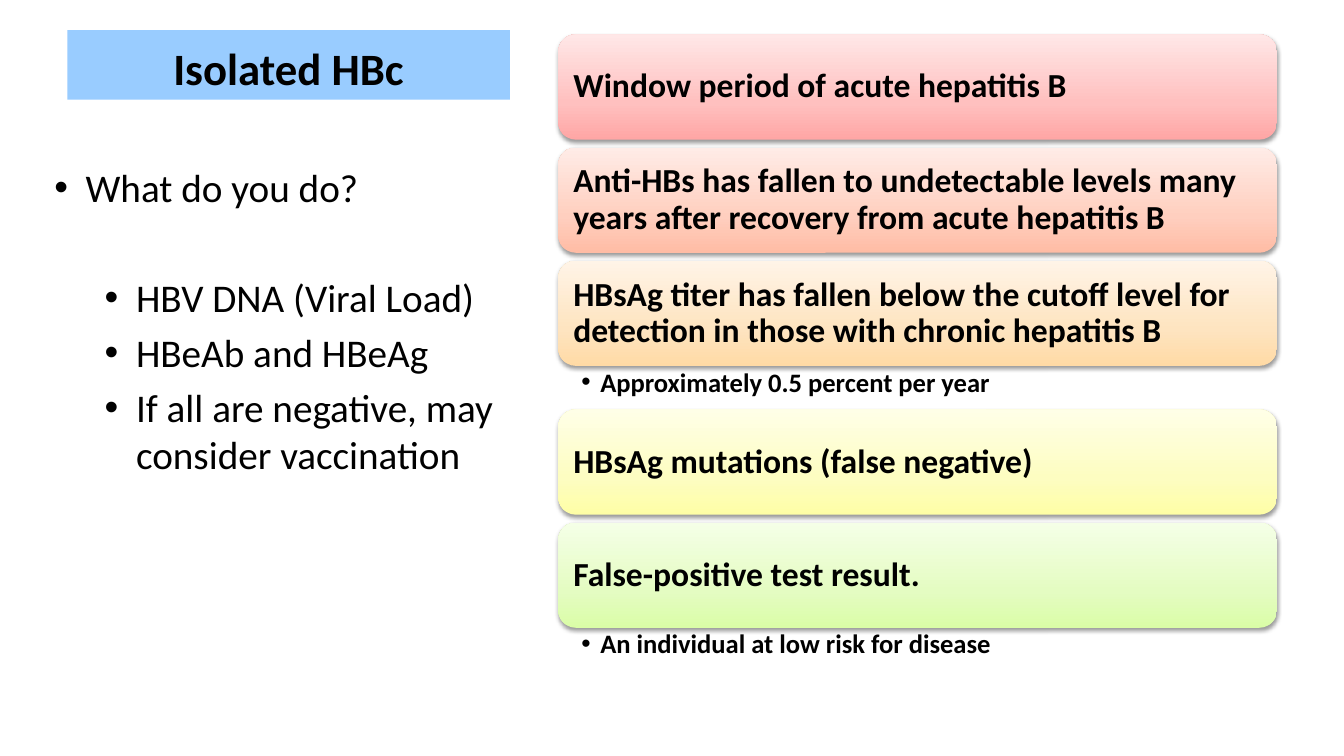
"""Build the slide on isolated HBc: next steps beside its possible causes."""
from dataclasses import dataclass

import lxml.etree
import pptx
import pptx.dml.color
import pptx.enum.shapes
import pptx.enum.text
import pptx.oxml.ns
import pptx.util

Cm = pptx.util.Cm
Pt = pptx.util.Pt
qn = pptx.oxml.ns.qn
ANCHOR = pptx.enum.text.MSO_ANCHOR
ALIGN = pptx.enum.text.PP_ALIGN
SHAPES = pptx.enum.shapes.MSO_SHAPE

FONT = "Calibri"
BLACK = "000000"
CARD_LEFT, CARD_TOP = 14.07, 0.87
CARD_WIDTH, CARD_HEIGHT = 18.11, 2.65
CARD_GAP, NOTE_HEIGHT = 0.2, 1.1


@dataclass
class Step:
    text: str
    left: float
    before: float


@dataclass
class Cause:
    text: str
    dark: str
    middle: str
    light: str
    note: str = ""


STEPS = [
    Step("What do you do?", 0.79, 5.6),
    Step("HBV DNA (Viral Load)", 2.06, 45),
    Step("HBeAb and HBeAg", 2.06, 5.6),
    Step("If all are negative, may consider vaccination", 2.06, 5.6),
]
CAUSES = [
    Cause("Window period of acute hepatitis B", "FFA6A5", "FFC0BF", "FFE7E7"),
    Cause("Anti-HBs has fallen to undetectable levels many years after recovery from acute hepatitis B",
          "FFBCA5", "FFCFBF", "FFECE7"),
    Cause("HBsAg titer has fallen below the cutoff level for detection in those with chronic hepatitis B",
          "FFDAA5", "FEE4C0", "FFF4E7", "Approximately 0.5 percent per year"),
    Cause("HBsAg mutations (false negative)", "FEFEA6", "FDFDC1", "FFFFE7"),
    Cause("False-positive test result.", "DAFDA7", "E4FCC2", "F5FFE7",
          "An individual at low risk for disease"),
]


def color(value: str) -> pptx.dml.color.RGBColor:
    """Turn a hex string into a colour."""
    return pptx.dml.color.RGBColor.from_string(value)


def add_span(para, text: str, size: float, bold: bool) -> None:
    """Add one run of black text to a paragraph."""
    span = para.add_run()
    span.text = text
    span.font.name = FONT
    span.font.size = Pt(size)
    span.font.bold = bold
    span.font.color.rgb = color(BLACK)


def add_bullet(para, left: float, hanging: float) -> None:
    """Give a paragraph a hanging round bullet."""
    properties = para._p.get_or_add_pPr()
    properties.set("marL", str(Cm(left)))
    properties.set("indent", str(-Cm(hanging)))
    lxml.etree.SubElement(properties, qn("a:buFont"), typeface="Arial")
    lxml.etree.SubElement(properties, qn("a:buChar"), char="•")


def set_margins(frame, left: float, top: float, right: float, bottom: float) -> None:
    """Wrap a text frame and set its inner margins."""
    frame.word_wrap = True
    frame.margin_left, frame.margin_top = Cm(left), Cm(top)
    frame.margin_right, frame.margin_bottom = Cm(right), Cm(bottom)


def add_gradient(shape, cause: Cause) -> None:
    """Fill a card from dark at the bottom to light at the top."""
    shape.fill.gradient()
    shape.fill.gradient_angle = 90
    stops = shape._element.spPr.find(".//" + qn("a:gsLst"))
    lxml.etree.SubElement(stops, qn("a:gs"), pos="100000")
    shades = [(0, cause.dark), (0.35, cause.middle), (1, cause.light)]
    for stop, (position, shade) in zip(shape.fill.gradient_stops, shades):
        stop.position = position
        stop.color.rgb = color(shade)


def add_shadow(shape) -> None:
    """Put a soft shadow below a card."""
    shape.shadow.inherit = False
    effects = shape._element.spPr.find(qn("a:effectLst"))
    shadow = lxml.etree.SubElement(effects, qn("a:outerShdw"), blurRad=str(Pt(3.1)),
                                   dist=str(Pt(1.6)), dir="5400000", rotWithShape="0")
    shade = lxml.etree.SubElement(shadow, qn("a:srgbClr"), val=BLACK)
    lxml.etree.SubElement(shade, qn("a:alpha"), val="38000")


def add_title(page) -> None:
    """Draw the title bar."""
    bar = page.shapes.add_shape(SHAPES.RECTANGLE, Cm(1.7), Cm(0.76), Cm(11.15), Cm(1.75))
    bar.shadow.inherit = False
    bar.fill.solid()
    bar.fill.fore_color.rgb = color("99CCFF")
    bar.line.fill.background()
    frame = bar.text_frame
    set_margins(frame, 0.25, 0.13, 0.25, 0.13)
    frame.vertical_anchor = ANCHOR.BOTTOM
    para = frame.paragraphs[0]
    para.alignment = ALIGN.CENTER
    add_span(para, "Isolated HBc", 32, True)


def add_steps(page) -> None:
    """Write the bulleted list of next steps."""
    box = page.shapes.add_textbox(Cm(1.12), Cm(3.99), Cm(11.71), Cm(13.03))
    frame = box.text_frame
    set_margins(frame, 0.25, 0.13, 0.25, 0.13)
    for index, step in enumerate(STEPS):
        para = frame.add_paragraph() if index else frame.paragraphs[0]
        para.space_before = Pt(step.before)
        add_bullet(para, step.left, 0.79)
        add_span(para, step.text, 28, False)


def add_card(page, cause: Cause, top: float) -> None:
    """Draw the card of one cause."""
    card = page.shapes.add_shape(SHAPES.ROUNDED_RECTANGLE, Cm(CARD_LEFT), Cm(top),
                                 Cm(CARD_WIDTH), Cm(CARD_HEIGHT))
    add_gradient(card, cause)
    card.line.fill.background()
    add_shadow(card)
    frame = card.text_frame
    set_margins(frame, 0.25, 0.25, 0.25, 0.25)
    frame.vertical_anchor = ANCHOR.MIDDLE
    para = frame.paragraphs[0]
    para.alignment = ALIGN.LEFT
    para.line_spacing = 0.9
    add_span(para, cause.text, 24, True)


def add_note(page, text: str, top: float) -> None:
    """Write the bulleted note under a card."""
    box = page.shapes.add_textbox(Cm(CARD_LEFT), Cm(top), Cm(CARD_WIDTH), Cm(NOTE_HEIGHT))
    set_margins(box.text_frame, 0.58, 0.08, 0.48, 0.08)
    para = box.text_frame.paragraphs[0]
    para.line_spacing = 0.9
    add_bullet(para, 0.48, 0.48)
    add_span(para, text, 19, True)


def main() -> None:
    """Build and save the deck."""
    deck = pptx.Presentation()
    deck.slide_width, deck.slide_height = Cm(33.87), Cm(19.05)
    page = deck.slides.add_slide(deck.slide_layouts[6])
    add_title(page)
    add_steps(page)
    top = CARD_TOP
    for cause in CAUSES:
        add_card(page, cause, top)
        top += CARD_HEIGHT
        if cause.note:
            add_note(page, cause.note, top)
        top += NOTE_HEIGHT if cause.note else CARD_GAP
    deck.save("out.pptx")


if __name__ == "__main__":
    main()
